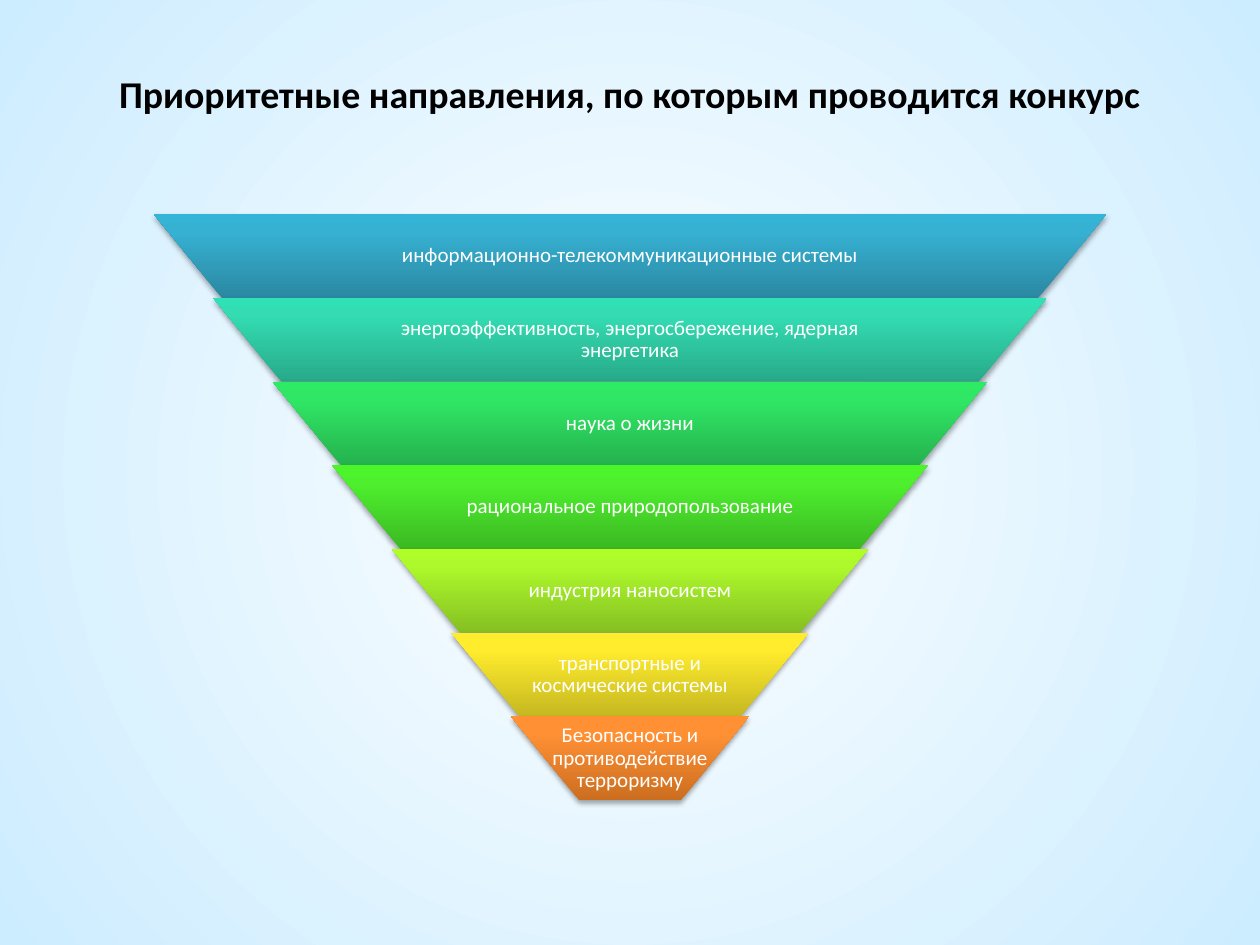
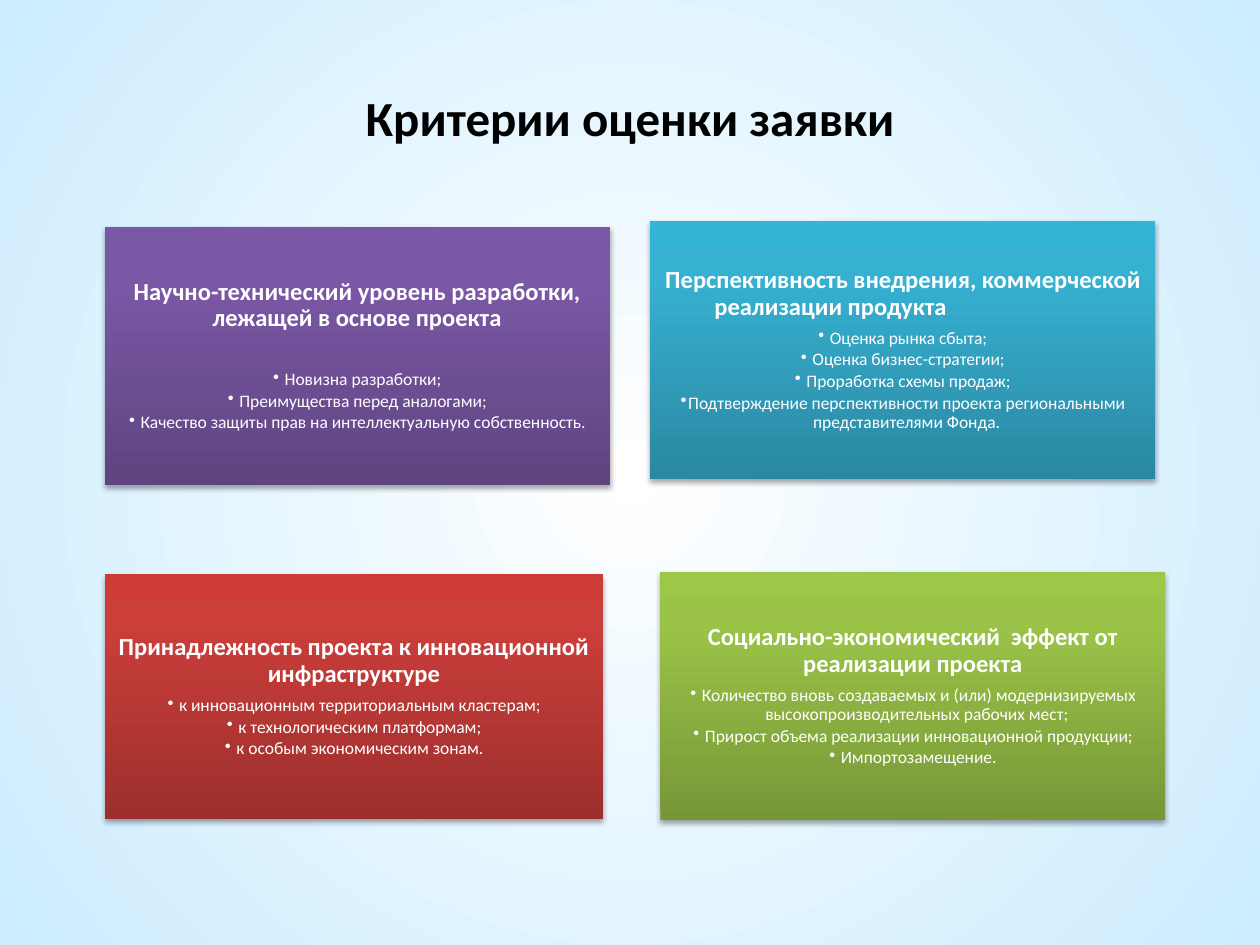
from dataclasses import dataclass

from lxml import etree
from pptx import Presentation
from pptx.dml.color import RGBColor
from pptx.enum.shapes import MSO_SHAPE
from pptx.enum.text import MSO_ANCHOR, PP_ALIGN
from pptx.oxml.ns import qn
from pptx.util import Inches, Pt

CENTER, LEFT = PP_ALIGN.CENTER, PP_ALIGN.LEFT
MIDDLE = MSO_ANCHOR.MIDDLE
RECT, TRAPEZOID = MSO_SHAPE.RECTANGLE, MSO_SHAPE.TRAPEZOID


@dataclass(frozen=True)
class Theme:
    font: str = "Calibri"
    ink: str = "000000"
    light: str = "FFFFFF"
    backdrop: tuple = ((0, "FFFFFF"), (100, "CCECFF"))
    shade_stops: tuple = (0, 80, 100)
    teal: tuple = ("2A88A2", "37B1D2", "34B4D6")
    level_size: float = 12
    heading_size: float = 14
    bullet_size: float = 10


T = Theme()
TITLE_BOX = (0.5, 0.3, 9, 1.25)

# Funnel levels, top to bottom: lines of text and shades
LEVELS = [
    (["информационно-телекоммуникационные системы"], T.teal),
    (["энергоэффективность, энергосбережение, ядерная энергетика"],
     ("27AA89", "33DCB2", "30E1B5")),
    (["наука о жизни"], ("25B24E", "30E765", "2DEB64")),
    (["рациональное природопользование"], ("3CB923", "4EF02E", "4CF52A")),
    (["индустрия наносистем"], ("85C022", "ADF92C", "AFFE28")),
    (["транспортные и космические системы"], ("C6B821", "FFEC2D", "FFED2E")),
    (["Безопасность и", "противодействие", "терроризму"],
     ("CC6E20", "FF9034", "FF9136")),
]

# Criteria cards: box, shades, heading, heading format, bullets
CARDS = [
    ((0.83, 4.56, 3.96, 1.94), ("9C2F2D", "CB3E3A", "CE3B37"),
     "Принадлежность проекта к инновационной инфраструктуре", {},
     [" к инновационным территориальным кластерам;",
      " к технологическим платформам;",
      " к особым экономическим зонам."]),
    ((5.24, 4.54, 4.01, 1.97), ("779737", "9BC348", "9DC746"),
     "Социально-экономический  эффект от реализации проекта", {},
     [" Количество вновь создаваемых и (или) модернизируемых "
      "высокопроизводительных рабочих мест;",
      " Прирост объема реализации инновационной продукции;",
      " Импортозамещение."]),
    ((0.83, 1.8, 4.01, 2.05), ("5F4480", "7B58A6", "7C57A8"),
     "Научно-технический уровень разработки, лежащей в основе проекта",
     {"after": 22},
     [" Новизна разработки;",
      " Преимущества перед аналогами;",
      " Качество защиты прав на интеллектуальную собственность."]),
    ((5.16, 1.75, 4.01, 2.05), T.teal,
     "Перспективность внедрения, коммерческой реализации продукта",
     {"align": LEFT, "margin": 0.45, "indent": -0.39},
     [" Оценка рынка сбыта;",
      " Оценка бизнес-стратегии;",
      " Проработка схемы продаж;",
      "Подтверждение перспективности проекта региональными "
      "представителями Фонда."]),
]


def set_attrs(obj, values):
    for name, value in values.items():
        setattr(obj, name, value)


def add_xml(parent, tag, **attrs):
    node = etree.SubElement(parent, qn(tag))
    for name, value in attrs.items():
        node.set(name, str(value))
    return node


def set_gradient(fill, element, stops, radial=False):
    """Fill with any number of stops, radial or dark at the bottom."""
    fill.gradient()
    grad = element.find(".//" + qn("a:gradFill"))
    for child in list(grad):
        grad.remove(child)
    grad.set("rotWithShape", "0")
    gs_list = add_xml(grad, "a:gsLst")
    for position, color in stops:
        gs = add_xml(gs_list, "a:gs", pos=position * 1000)
        add_xml(gs, "a:srgbClr", val=color)
    if radial:
        path = add_xml(grad, "a:path", path="circle")
        add_xml(path, "a:fillToRect", l=50000, t=50000, r=50000, b=50000)
    else:
        add_xml(grad, "a:lin", ang=270 * 60000, scaled=0)


def add_shaded(s, kind, box, shades):
    """Shape with a vertical gradient and a soft shadow below."""
    sp = s.shapes.add_shape(kind, *map(Inches, box))
    sp.line.fill.background()
    set_gradient(sp.fill, sp.element.spPr, zip(T.shade_stops, shades))
    sp.shadow.inherit = False
    effects = sp.element.spPr.find(qn("a:effectLst"))
    shadow = add_xml(effects, "a:outerShdw", blurRad=Pt(3.1), dist=Pt(1.8),
                     dir=90 * 60000, rotWithShape=0)
    color = add_xml(shadow, "a:srgbClr", val=T.ink)
    add_xml(color, "a:alpha", val=35000)
    return sp


def setup_frame(tf, inset):
    set_attrs(tf, {"word_wrap": True, "vertical_anchor": MIDDLE})
    set_attrs(tf, {f"margin_{side}": Inches(inset)
                   for side in ("left", "right", "top", "bottom")})


def add_paragraph(tf, text, size, color=T.light, bold=False, align=CENTER,
                  spacing=0.9, after=0, margin=0, indent=0, bullet=None):
    p = tf.paragraphs[0]
    if p.runs:
        p = tf.add_paragraph()
    set_attrs(p, {"alignment": align, "line_spacing": spacing,
                  "space_before": Pt(0), "space_after": Pt(after)})
    pPr = p._p.get_or_add_pPr()
    pPr.set("marL", str(Inches(margin)))
    pPr.set("indent", str(Inches(indent)))
    if bullet:
        add_xml(pPr, "a:buChar", char=bullet)
    r = p.add_run()
    r.text = text
    set_attrs(r.font, {"name": T.font, "size": Pt(size), "bold": bold})
    r.font.color.rgb = RGBColor.from_string(color)


def add_title(s, text, size, lift=0):
    """Centred title; lift is extra room kept free beneath it."""
    tf = s.shapes.add_textbox(*map(Inches, TITLE_BOX)).text_frame
    setup_frame(tf, 0.05)
    tf.margin_bottom = Inches(0.05 + lift)
    add_paragraph(tf, text, size, T.ink, bold=True, spacing=1)


def add_funnel(s, box):
    """Inverted pyramid whose levels narrow by an equal step."""
    left, top, width, height = box
    level_h = height / len(LEVELS)
    step = width / (len(LEVELS) + 1)
    for i, (lines, shades) in enumerate(LEVELS):
        level_w, y = width - i * step, top + i * level_h
        sp = add_shaded(s, TRAPEZOID,
                        (left + i * step / 2, y, level_w, level_h), shades)
        sp.rotation = 180
        sp.adjustments[0] = 0.814

        # Label: narrower than its level, except on the last one
        label_w = level_w * (1 if i == len(LEVELS) - 1 else 0.65)
        label = (left + (width - label_w) / 2, y, label_w, level_h)
        tf = s.shapes.add_textbox(*map(Inches, label)).text_frame
        setup_frame(tf, 0.02)
        for line in lines:
            add_paragraph(tf, line, T.level_size)


def add_card(s, box, shades, heading, heading_format, bullets):
    tf = add_shaded(s, RECT, box, shades).text_frame
    setup_frame(tf, 0.06)
    add_paragraph(tf, heading, T.heading_size, bold=True,
                  **{"after": 5, **heading_format})
    for text in bullets:
        add_paragraph(tf, text, T.bullet_size, after=1.5,
                      margin=0.06, indent=-0.06, bullet="•")


def directions_slide(prs):
    s = prs.slides.add_slide(prs.slide_layouts[6])
    add_title(s, "Приоритетные направления, по которым проводится конкурс",
              21.6, lift=0.37)
    add_funnel(s, (1.22, 1.7, 7.56, 4.65))


def criteria_slide(prs):
    s = prs.slides.add_slide(prs.slide_layouts[6])
    add_title(s, "Критерии оценки заявки", 28)
    for card in CARDS:
        add_card(s, *card)


def main():
    prs = Presentation()
    set_attrs(prs, {"slide_width": Inches(10), "slide_height": Inches(7.5)})
    # Shared background
    master = prs.slide_master
    set_gradient(master.background.fill, master.element, T.backdrop,
                 radial=True)
    directions_slide(prs)
    criteria_slide(prs)
    prs.save("out.pptx")


if __name__ == "__main__":
    main()
